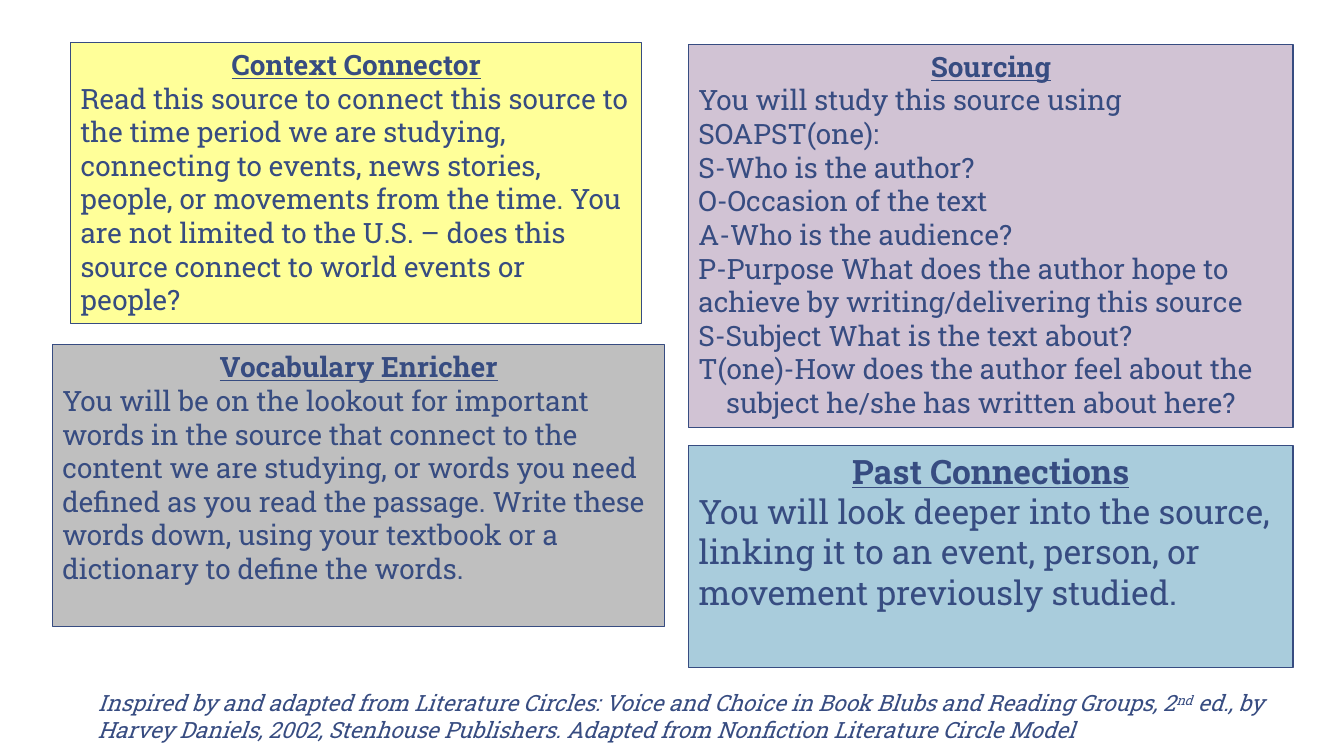
from pptx import Presentation
from pptx.dml.color import RGBColor
from pptx.enum.shapes import MSO_SHAPE
from pptx.enum.text import MSO_ANCHOR, PP_ALIGN
from pptx.util import Cm, Pt

RECTANGLE = MSO_SHAPE.RECTANGLE
TOP = MSO_ANCHOR.TOP
LEFT, CENTER = PP_ALIGN.LEFT, PP_ALIGN.CENTER

FONT = "Roboto Slab"
NAVY = RGBColor(0x37, 0x4C, 0x81)
YELLOW = RGBColor(0xFF, 0xFF, 0x99)
MAUVE = RGBColor(0xD1, 0xC3, 0xD4)
BLUE = RGBColor(0xA9, 0xCC, 0xDC)
GRAY = RGBColor(0xBF, 0xBF, 0xBF)

SUBJECT_LINE = "subject he/she has written about here?"
SUBJECT_INDENT = Cm(0.7)

ROLES = [
    {"title": "Context Connector", "place": (1.78, 1.07, 14.4, 7.09),
     "fill": YELLOW, "line": 0.75, "size": 20,
     "body": ["Read this source to connect this source to the time period we are "
              "studying, connecting to events, news stories, people, or movements "
              "from the time. You are not limited to the U.S. – does this source "
              "connect to world events or people?"]},
    {"title": "Sourcing", "place": (17.35, 1.12, 15.24, 9.65),
     "fill": MAUVE, "line": 1, "size": 20,
     "body": ["You will study this source using SOAPST(one):",
              "S-Who is the author?",
              "O-Occasion of the text",
              "A-Who is the audience?",
              "P-Purpose What does the author hope to achieve by "
              "writing/delivering this source",
              "S-Subject What is the text about?",
              "T(one)-How does the author feel about the",
              SUBJECT_LINE]},
    {"title": "Past Connections", "place": (17.35, 11.23, 15.24, 5.59),
     "fill": BLUE, "line": 1, "size": 24,
     "body": ["You will look deeper into the source, linking it to an event, "
              "person, or movement previously studied."]},
    {"title": "Vocabulary Enricher", "place": (1.32, 8.69, 15.44, 7.09),
     "fill": GRAY, "line": 0.75, "size": 20,
     "body": ["You will be on the lookout for important words in the source that "
              "connect to the content we are studying, or words you need defined "
              "as you read the passage. Write these words down, using your "
              "textbook or a dictionary to define the words."]},
]

CREDIT_PLACE = (2.21, 17.25, 30.28, 1.63)
CREDIT = [
    ("Inspired by and adapted from Literature Circles: Voice and Choice in Book "
     "Blubs and Reading Groups, 2", False),
    ("nd", True),
    (" ed., by Harvey Daniels, 2002, Stenhouse Publishers. Adapted from "
     "Nonfiction Literature Circle Model", False),
]


def add_span(para, text, size):
    span = para.add_run()
    span.text = text
    span.font.name = FONT
    span.font.size = Pt(size)
    span.font.color.rgb = NAVY
    return span


def add_role(page, role):
    box = page.shapes.add_shape(RECTANGLE, *map(Cm, role["place"]))
    box.shadow.inherit = False
    box.fill.solid()
    box.fill.fore_color.rgb = role["fill"]
    box.line.color.rgb = NAVY
    box.line.width = Pt(role["line"])
    frame = box.text_frame
    frame.word_wrap = True
    frame.vertical_anchor = TOP
    heading = frame.paragraphs[0]
    heading.alignment = CENTER
    title = add_span(heading, role["title"], role["size"])
    title.font.bold = True
    title.font.underline = True
    for text in role["body"]:
        para = frame.add_paragraph()
        para.alignment = LEFT
        if text == SUBJECT_LINE:
            para._p.get_or_add_pPr().set("marL", str(SUBJECT_INDENT))
        add_span(para, text, role["size"])


def add_credit(page):
    box = page.shapes.add_textbox(*map(Cm, CREDIT_PLACE))
    box.text_frame.word_wrap = True
    para = box.text_frame.paragraphs[0]
    for text, raised in CREDIT:
        span = add_span(para, text, 16)
        span.font.italic = True
        if raised:
            span._r.get_or_add_rPr().set("baseline", "30000")


def main():
    deck = Presentation()
    deck.slide_width, deck.slide_height = Cm(33.87), Cm(19.05)
    page = deck.slides.add_slide(deck.slide_layouts[6])
    for role in ROLES:
        add_role(page, role)
    add_credit(page)
    deck.save("out.pptx")


if __name__ == "__main__":
    main()
